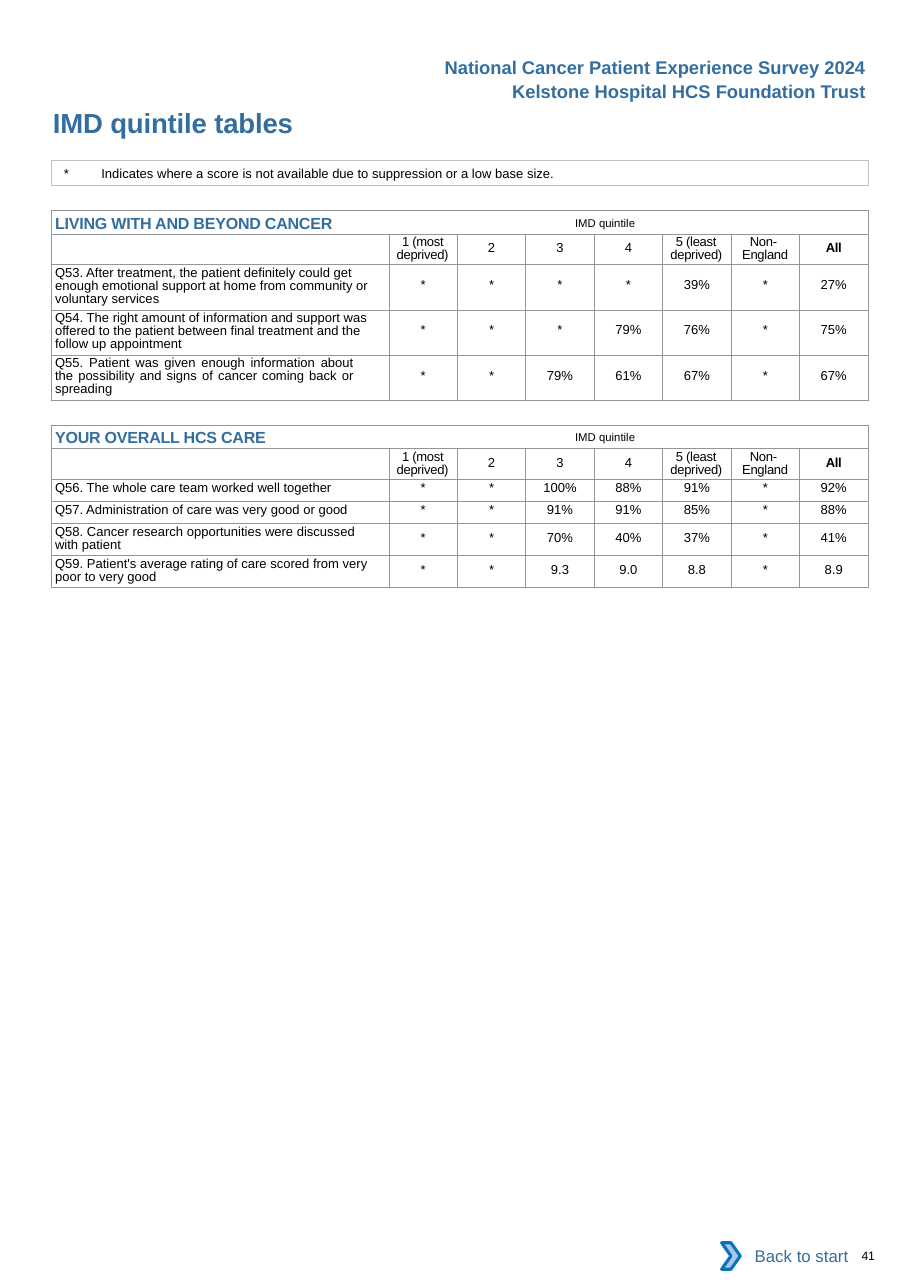
import pptx
import pptx.dml.color
import pptx.enum.shapes
import pptx.enum.text
import pptx.oxml
import pptx.oxml.ns
import pptx.util

RGBColor = pptx.dml.color.RGBColor
Inches = pptx.util.Inches
Pt = pptx.util.Pt
ALIGN = pptx.enum.text.PP_ALIGN
ANCHOR = pptx.enum.text.MSO_ANCHOR
PRESET = pptx.enum.shapes.MSO_SHAPE

HEADING_BLUE = RGBColor(0x33, 0x6E, 0x9F)
BLACK = RGBColor(0, 0, 0)
WHITE = RGBColor(0xFF, 0xFF, 0xFF)
NOTE_LINE = RGBColor(0xBF, 0xBF, 0xBF)
GRID_LINE = RGBColor(0x93, 0x95, 0x98)
ARROW_FILL = RGBColor(0xA8, 0xC7, 0xE9)
ARROW_LINE = RGBColor(0x0A, 0x74, 0xBB)

TITLE = "IMD quintile tables"
SURVEY = "National Cancer Patient Experience Survey 2024"
TRUST = "Kelstone Hospital HCS Foundation Trust"
NOTE = "*\tIndicates where a score is not available due to suppression or a low base size."
BACK_LINK = "Back to start"
PAGE_NUMBER = "41"
GROUP_LABEL = "IMD quintile"
QUINTILES = ["1 (most deprived)", "2", "3", "4", "5 (least deprived)", "Non- England", "All"]

# Each question: wording, number of lines it takes, scores by quintile
SECTIONS = [
    ("LIVING WITH AND BEYOND CANCER", 1.91, [
        ("Q53. After treatment, the patient definitely could get enough emotional support "
         "at home from community or voluntary services", 3, "* * * * 39% * 27%"),
        ("Q54. The right amount of information and support was offered to the patient "
         "between final treatment and the follow up appointment", 3, "* * * 79% 76% * 75%"),
        ("Q55. Patient was given enough information about the possibility and signs of "
         "cancer coming back or spreading", 3, "* * 79% 61% 67% * 67%"),
    ]),
    ("YOUR OVERALL HCS CARE", 3.86, [
        ("Q56. The whole care team worked well together", 1, "* * 100% 88% 91% * 92%"),
        ("Q57. Administration of care was very good or good", 1, "* * 91% 91% 85% * 88%"),
        ("Q58. Cancer research opportunities were discussed with patient", 2,
         "* * 70% 40% 37% * 41%"),
        ("Q59. Patient's average rating of care scored from very poor to very good", 2,
         "* * 9.3 9.0 8.8 * 8.9"),
    ]),
]
JUSTIFIED_QUESTION = "Q55"

LEFT, CONTENT_WIDTH = 0.47, 7.41
QUESTION_WIDTH = 3.06
SCORE_WIDTH = (CONTENT_WIDTH - QUESTION_WIDTH) / len(QUINTILES)
HEADING_HEIGHT, LABEL_HEIGHT = 0.21, 0.28
ROW_HEIGHT = {1: 0.2, 2: 0.29, 3: 0.41}
SCORE_TOP = {1: 0.01, 2: 0.06, 3: 0.12}
LINE_PITCH = 8.6


def write(frame, text, size=8.5, color=BLACK, bold=False, align=ALIGN.LEFT, indent=0,
          first=0, tab=None, pitch=None, spacing=0, raised=None):
    """Fill the first paragraph; raised is a (text, size) tail set 10% above the baseline."""
    paragraph = frame.paragraphs[0]
    paragraph.alignment = align
    if pitch:
        paragraph.line_spacing = Pt(pitch)
    properties = paragraph._p.get_or_add_pPr()
    properties.set("marL", str(Inches(indent)))
    if first:  # a first-line indent, even of zero, would cancel the tab stop
        properties.set("indent", str(Inches(first)))
    if tab:
        properties.append(pptx.oxml.parse_xml(
            f'<a:tabLst {pptx.oxml.ns.nsdecls("a")}>'
            f'<a:tab pos="{Inches(tab)}" algn="l"/></a:tabLst>'))
    pieces = [(text, size, color, bold, None)]
    if raised:
        pieces.append((*raised, BLACK, False, "10000"))
    for words, points, ink, heavy, baseline in pieces:
        run = paragraph.add_run()
        run.text = words
        run.font.name, run.font.size = "Arial", Pt(points)
        run.font.bold, run.font.color.rgb = heavy, ink
        if spacing and not baseline:
            run._r.get_or_add_rPr().set("spc", str(round(spacing * 100)))
        if baseline:
            run._r.get_or_add_rPr().set("baseline", baseline)


def set_margins(holder, left=0, top=0, right=0, bottom=0):
    holder.margin_left, holder.margin_top = Inches(left), Inches(top)
    holder.margin_right, holder.margin_bottom = Inches(right), Inches(bottom)


def add_text(slide, box, text, margins=(0, 0, 0, 0), **style):
    frame = slide.shapes.add_textbox(*map(Inches, box)).text_frame
    frame.word_wrap = True
    set_margins(frame, *margins)
    write(frame, text, **style)


def add_block(shapes, preset, box, fill=None, line=None, line_width=0.5):
    block = shapes.add_shape(preset, *map(Inches, box))
    block.shadow.inherit = False
    if fill is None:
        block.fill.background()
    else:
        block.fill.solid()
        block.fill.fore_color.rgb = fill
    if line is None:
        block.line.fill.background()
    else:
        block.line.color.rgb, block.line.width = line, Pt(line_width)
    return block


def rule_cell(cell):
    """Draw the thin grid line on all four sides of a cell without fill."""
    properties = cell._tc.get_or_add_tcPr()
    for position, side in enumerate(("lnL", "lnR", "lnT", "lnB")):
        properties.insert(position, pptx.oxml.parse_xml(
            f'<a:{side} {pptx.oxml.ns.nsdecls("a")} w="{Pt(0.5)}"><a:solidFill>'
            f'<a:srgbClr val="{GRID_LINE}"/></a:solidFill></a:{side}>'))
    cell.fill.background()


def fill_cell(cell, text, top=0, right=0, **style):
    set_margins(cell, top=top, right=right)
    write(cell.text_frame, text, **style)


def add_section(slide, heading, top, questions):
    heights = [HEADING_HEIGHT, LABEL_HEIGHT] + [ROW_HEIGHT[lines] for _, lines, _ in questions]
    box = (LEFT, top, CONTENT_WIDTH, sum(heights))
    table = slide.shapes.add_table(len(heights), 1 + len(QUINTILES), *map(Inches, box)).table
    table.first_row = table.horz_banding = False
    for row, height in zip(table.rows, heights):
        row.height = Inches(height)
    for number, column in enumerate(table.columns):
        column.width = Inches(SCORE_WIDTH if number else QUESTION_WIDTH)
    for cell in table.iter_cells():
        rule_cell(cell)

    banner = table.cell(0, 0)
    banner.merge(table.cell(0, len(QUINTILES)))
    banner.vertical_anchor = ANCHOR.MIDDLE
    fill_cell(banner, heading + "\t", size=10.5, color=HEADING_BLUE, bold=True, indent=0.03,
              tab=4.72, spacing=-0.1, raised=(GROUP_LABEL, 12.8))

    corner = table.cell(1, 0)
    set_margins(corner)
    corner.text_frame.paragraphs[0]._p.append(pptx.oxml.parse_xml(
        f'<a:endParaRPr {pptx.oxml.ns.nsdecls("a")} sz="850"/>'))
    for column, label in enumerate(QUINTILES, 1):
        if " " in label:
            indent, first = (0.1, 0.07) if label.startswith("Non") else (0.07, 0.05)
            fill_cell(table.cell(1, column), label, top=0.02, indent=indent, first=first,
                      pitch=LINE_PITCH, spacing=-0.2)
        else:
            fill_cell(table.cell(1, column), label, top=0.06, align=ALIGN.CENTER,
                      bold=label == "All", spacing=-0.2)

    for row, (question, lines, scores) in enumerate(questions, 2):
        justified = question.startswith(JUSTIFIED_QUESTION)
        fill_cell(table.cell(row, 0), question, indent=0.03,
                  top=0.02 if lines > 1 else 0.01, right=0.32 if justified else 0.12,
                  align=ALIGN.JUSTIFY if justified else ALIGN.LEFT,
                  pitch=LINE_PITCH if lines > 1 else None)
        for column, score in enumerate(scores.split(), 1):
            fill_cell(table.cell(row, column), score, top=SCORE_TOP[lines], align=ALIGN.CENTER)


def main():
    deck = pptx.Presentation()
    deck.slide_width, deck.slide_height = Inches(8.26), Inches(11.69)
    slide = deck.slides.add_slide(deck.slide_layouts[6])

    add_text(slide, (LEFT, 0.96, 4.5, 0.3), TITLE, size=18, color=HEADING_BLUE, bold=True,
             indent=0.01, spacing=-0.1)
    for top, line in ((0.46, SURVEY), (0.68, TRUST)):
        add_text(slide, (3.46, top, 4.5, 0.3), line, margins=(0.1, 0.05, 0.1, 0.05), size=12,
                 color=HEADING_BLUE, bold=True, align=ALIGN.RIGHT)

    note = add_block(slide.shapes, PRESET.RECTANGLE, (LEFT, 1.46, CONTENT_WIDTH, 0.22),
                     line=NOTE_LINE)
    set_margins(note.text_frame, top=0.04, bottom=0.04)
    note.text_frame.vertical_anchor = ANCHOR.TOP
    write(note.text_frame, NOTE, indent=0.11, tab=0.34)

    for section in SECTIONS:
        add_section(slide, *section)

    back = slide.shapes.add_group_shape()
    link = add_block(back.shapes, PRESET.RECTANGLE, (6.62, 11.19, 1.18, 0.42), fill=WHITE)
    link.text_frame.vertical_anchor = ANCHOR.MIDDLE
    write(link.text_frame, BACK_LINK, size=11, color=HEADING_BLUE, align=ALIGN.RIGHT)
    add_block(back.shapes, PRESET.CHEVRON, (6.55, 11.28, 0.17, 0.24), fill=ARROW_FILL,
              line=ARROW_LINE, line_width=2)
    add_text(slide, (7.72, 11.33, 0.51, 0.13), PAGE_NUMBER, size=8, indent=0.1, spacing=-0.2)

    deck.save("out.pptx")


if __name__ == "__main__":
    main()
